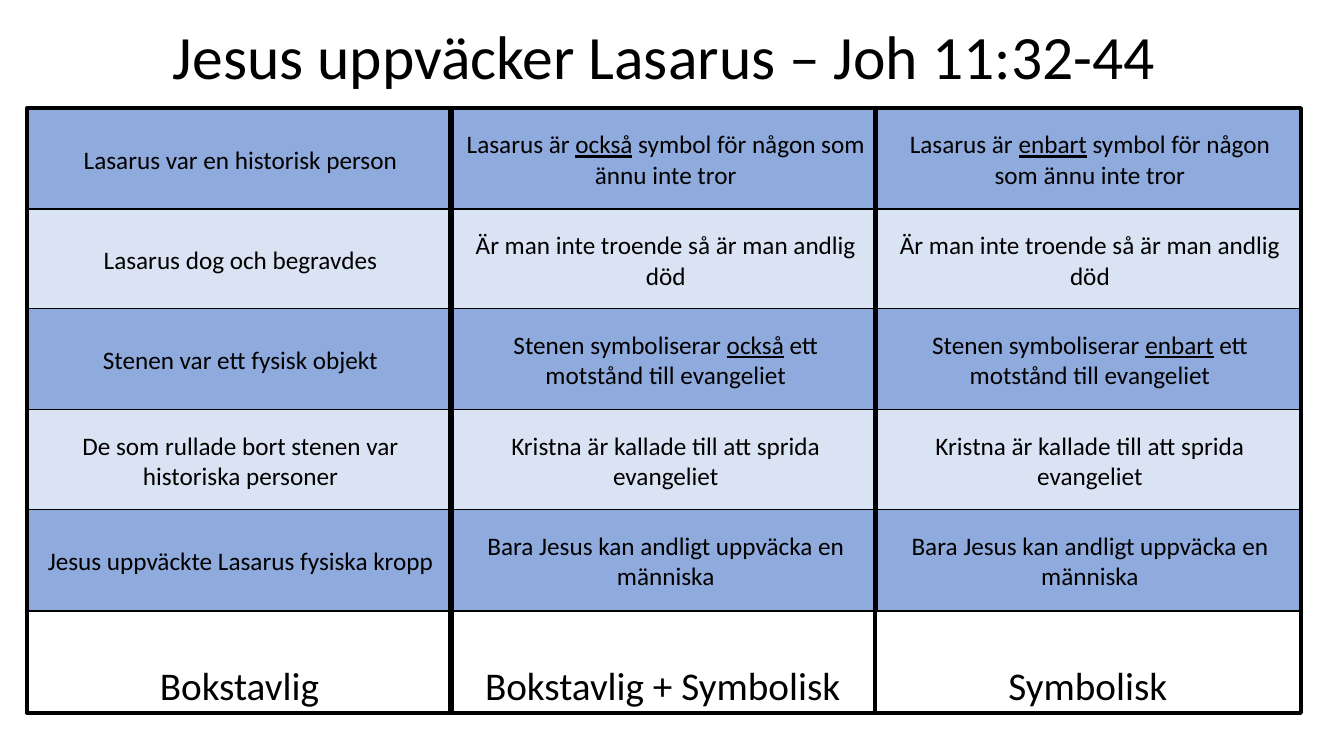
import pptx
import pptx.dml.color
import pptx.enum.shapes
import pptx.enum.text
import pptx.util

PX = 9525  # EMU per px, 96 px to the inch
FONT = "Calibri"
COLORS = {"text": "000000", "line": "000000", "dark": "8FAADC", "light": "DAE3F3"}
ANCHOR = pptx.enum.text.MSO_ANCHOR

TOP = 103
CELL_W, CELL_H = 404, 97
FRAME_H = 576

# Each column: heading, cell left, frame left, frame width, statements.
# Words between underscores are underlined.
COLUMNS = [
    ("Bokstavlig", 27, 26, 404, [
        "Lasarus var en historisk person",
        "Lasarus dog och begravdes",
        "Stenen var ett fysisk objekt",
        "De som rullade bort stenen var historiska personer",
        "Jesus uppväckte Lasarus fysiska kropp",
    ]),
]
SYMBOLIC = [
    "Lasarus är _{}_ symbol för någon som ännu inte tror",
    "Är man inte troende så är man andlig död",
    "Stenen symboliserar _{}_ ett motstånd till evangeliet",
    "Kristna är kallade till att sprida evangeliet",
    "Bara Jesus kan andligt uppväcka en människa",
]
for heading, word, cell_x, frame_x, frame_w in [
    ("Bokstavlig + Symbolisk", "också", 432, 429, 404),
    ("Symbolisk", "enbart", 836, 833, 406),
]:
    statements = [text.format(word) for text in SYMBOLIC]
    COLUMNS.append((heading, cell_x, frame_x, frame_w, statements))


def px(*lengths):
    return [pptx.util.Emu(n * PX) for n in lengths]


def rgb(name):
    return pptx.dml.color.RGBColor.from_string(COLORS[name])


def write(sp, text, size, anchor=ANCHOR.MIDDLE, spacing=None):
    tf = sp.text_frame
    tf.word_wrap = True
    tf.vertical_anchor = anchor
    p = tf.paragraphs[0]
    p.alignment = pptx.enum.text.PP_ALIGN.CENTER
    p.line_spacing = spacing
    for i, part in enumerate(text.split("_")):
        r = p.add_run()
        r.text = part
        r.font.name = FONT
        r.font.size = pptx.util.Pt(size)
        r.font.color.rgb = rgb("text")
        r.font.underline = i % 2 == 1


def add_box(s, x, y, w, h, line_width, fill=None):
    sp = s.shapes.add_shape(pptx.enum.shapes.MSO_SHAPE.RECTANGLE, *px(x, y, w, h))
    sp.shadow.inherit = False
    if fill:
        sp.fill.solid()
        sp.fill.fore_color.rgb = rgb(fill)
    else:
        sp.fill.background()
    sp.line.color.rgb = rgb("line")
    sp.line.width = pptx.util.Pt(line_width)
    return sp


def main():
    prs = pptx.Presentation()
    prs.slide_width, prs.slide_height = px(1280, 720)
    s = prs.slides.add_slide(prs.slide_layouts[6])

    # Title
    title = s.shapes.add_textbox(*px(26, 10, 1214, 93))
    write(title, "Jesus uppväcker Lasarus – Joh 11:32-44", 44, spacing=0.9)

    # Statement cells, with rows 95.5 px apart
    for _, cell_x, _, _, statements in COLUMNS:
        for row, text in enumerate(statements):
            y = TOP + (191 * row + 1) // 2
            fill = "light" if row % 2 else "dark"
            write(add_box(s, cell_x, y, CELL_W, CELL_H, 1, fill), text, 18)

    # Column frames with headings at the bottom
    for heading, _, frame_x, frame_w, _ in COLUMNS:
        frame = add_box(s, frame_x, TOP, frame_w, FRAME_H, 3)
        write(frame, heading, 28, anchor=ANCHOR.BOTTOM)

    prs.save("out.pptx")


if __name__ == "__main__":
    main()
